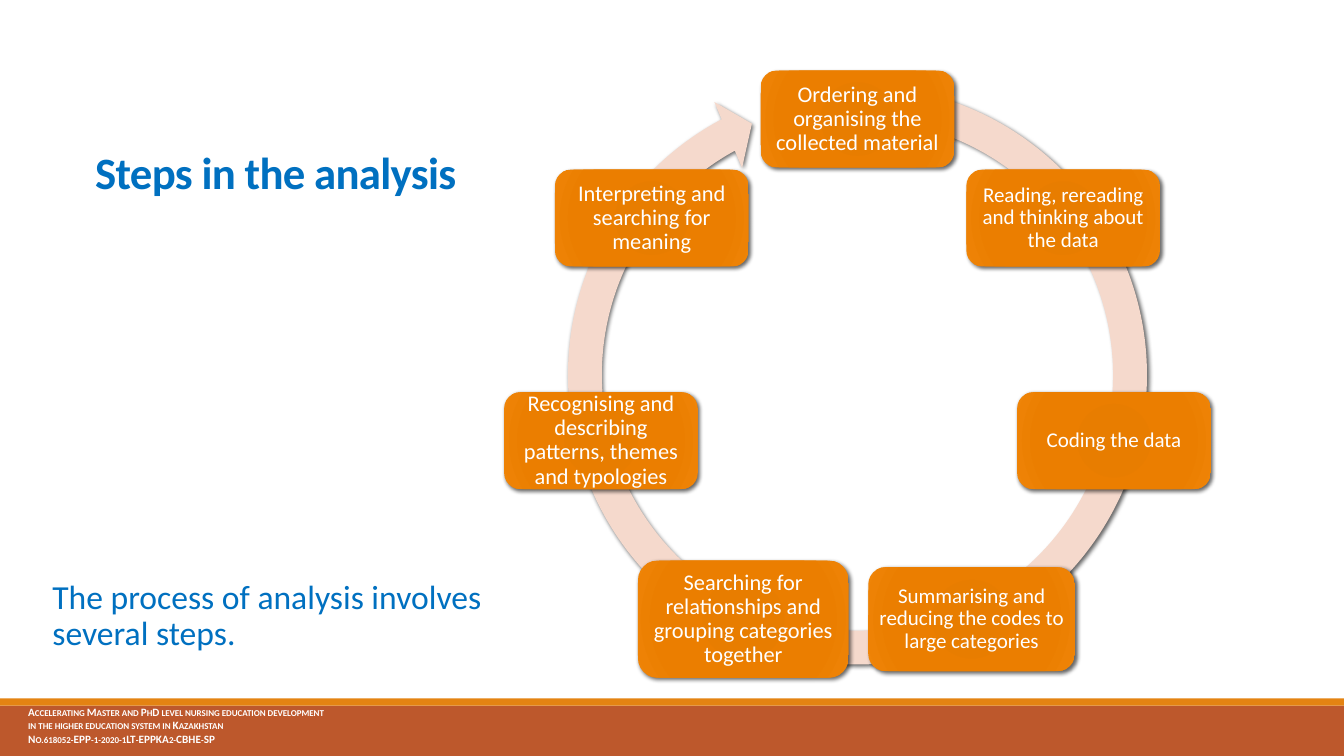
import math
from dataclasses import dataclass

from lxml import etree
from pptx import Presentation
from pptx import util as u
from pptx.dml import color
from pptx.enum import shapes, text
from pptx.oxml import ns

Cm = u.Cm


@dataclass(frozen=True)
class Theme:
    font: str = "Calibri"
    blue: str = "0070C0"
    white: str = "FFFFFF"
    rust: str = "BD582C"
    amber: str = "E48312"
    ring: str = "F5D9CC"
    glow: tuple = ((0, "E57B00"), (34, "E87D00"), (70, "EB7E00"), (100, "EF8407"))
    head: int = 32
    lead: int = 24
    step: int = 16
    dense: int = 15
    foot: int = 8


T = Theme()

# Text, type size, card width and height in cm, clockwise from the top
STEPS = [
    ("Ordering and organising the collected material", T.step, 4.88, 2.44),
    ("Reading, rereading and thinking about the data", T.dense, 4.88, 2.44),
    ("Coding the data", T.dense, 4.88, 2.44),
    ("Summarising and reducing the codes to large categories", T.dense, 5.21, 2.62),
    ("Searching for relationships and grouping categories together", T.step, 5.31, 2.95),
    ("Recognising and describing patterns, themes and typologies", T.step, 4.88, 2.44),
    ("Interpreting and searching for meaning", T.step, 4.88, 2.44),
]
FOOT = [
    "Accelerating Master and PhD level nursing education development",
    "in the higher education system in Kazakhstan",
    "No.618052-EPP-1-2020-1LT-EPPKA2-CBHE-SP",
]


def write(shape, lines, size, ink=T.white, bold=False, align=text.PP_ALIGN.LEFT,
          anchor=text.MSO_ANCHOR.TOP, pitch=1.0, pad=(0.25, 0.13), **marks):
    """Fill a shape with paragraphs; marks are extra run attributes."""
    frame = shape.text_frame
    frame.word_wrap = True
    frame.auto_size = text.MSO_AUTO_SIZE.NONE
    frame.vertical_anchor = anchor
    frame.margin_left = frame.margin_right = Cm(pad[0])
    frame.margin_top = frame.margin_bottom = Cm(pad[1])
    for i, line in enumerate(lines):
        para = frame.add_paragraph() if i else frame.paragraphs[0]
        para.alignment = align
        para.line_spacing = pitch
        para.space_before = u.Pt(0)
        run = para.add_run()
        run.text = line
        font = run.font
        font.name, font.size, font.bold = T.font, u.Pt(size), bold
        font.color.rgb = color.RGBColor.from_string(ink)
        for key, val in marks.items():
            run._r.get_or_add_rPr().set(key, val)


def place(shape, box):
    shape.left, shape.top, shape.width, shape.height = map(Cm, box)


def draw(slide, kind, box, fill):
    shape = slide.shapes.add_shape(kind, *map(Cm, box))
    shape.fill.solid()
    shape.fill.fore_color.rgb = color.RGBColor.from_string(fill)
    shape.line.fill.background()
    shape.shadow.inherit = False
    return shape


def shade(shape):
    """Add a soft shadow to the lower right."""
    effects = shape._element.spPr.find(ns.qn("a:effectLst"))
    drop = etree.SubElement(effects, ns.qn("a:outerShdw"), blurRad="38100",
                            dist="25400", dir="2700000", algn="tl", rotWithShape="0")
    tint = etree.SubElement(drop, ns.qn("a:srgbClr"), val="000000")
    etree.SubElement(tint, ns.qn("a:alpha"), val="60000")


def glow(shape):
    """Swap the solid fill for a radial gradient."""
    props = shape._element.spPr
    grad = etree.Element(ns.qn("a:gradFill"), rotWithShape="1")
    stops = etree.SubElement(grad, ns.qn("a:gsLst"))
    for pos, tone in T.glow:
        stop = etree.SubElement(stops, ns.qn("a:gs"), pos=str(pos * 1000))
        etree.SubElement(stop, ns.qn("a:srgbClr"), val=tone)
    route = etree.SubElement(grad, ns.qn("a:path"), path="circle")
    etree.SubElement(route, ns.qn("a:fillToRect"),
                     **{side: "100000" for side in "ltrb"})
    props.replace(props.find(ns.qn("a:solidFill")), grad)


def footer(slide, box):
    x, y, w, h = box
    strip = 0.18
    rect = shapes.MSO_SHAPE.RECTANGLE
    draw(slide, rect, (x, y + strip, w, h - strip), T.rust)
    draw(slide, rect, (x, y, w, strip), T.amber)
    note = slide.shapes.add_textbox(*map(Cm, (x + 0.46, y + 0.04, 11.66, 1.35)))
    write(note, FOOT, T.foot, bold=True, cap="small")


def intro(slide, box):
    x, y, w, h = box
    title = slide.shapes.title
    place(title, (x, y, w, 2.01))
    write(title, ["Steps in the analysis"], T.head, T.blue, bold=True,
          align=text.PP_ALIGN.CENTER, anchor=text.MSO_ANCHOR.BOTTOM,
          pitch=0.85, spc="-50")
    body = slide.placeholders[2]
    place(body, (x + 0.35, y + h - 2.44, 11.43, 2.44))
    write(body, ["The process of analysis involves several steps."],
          T.lead, T.blue, pitch=0.9, pad=(0, 0.13))


def cycle(slide, box):
    x, y, w, h = box
    # Ring with arrowhead
    ring = draw(slide, shapes.MSO_SHAPE.CIRCULAR_ARROW, box, T.ring)
    for i, val in enumerate((0.055, 3.307, 145.018, 169.582, 0.058)):
        ring.adjustments[i] = val
    shade(ring)
    # Cards at equal angles
    mid_x, mid_y, radius = x + w / 2, y + h / 2 + 0.18, 6.63
    for i, (label, size, wide, high) in enumerate(STEPS):
        turn = math.tau * i / len(STEPS)
        left = mid_x + radius * math.sin(turn) - wide / 2
        top = mid_y - radius * math.cos(turn) - high / 2
        card = draw(slide, shapes.MSO_SHAPE.ROUNDED_RECTANGLE,
                    (left, top, wide, high), T.amber)
        glow(card)
        shade(card)
        gap = 0.18 if size == T.step else 0.15
        write(card, [label], size, align=text.PP_ALIGN.CENTER,
              anchor=text.MSO_ANCHOR.MIDDLE, pitch=0.9, pad=(gap, gap))


def main():
    deck = Presentation()
    deck.slide_width, deck.slide_height = Cm(33.87), Cm(19.05)
    slide = deck.slides.add_slide(deck.slide_layouts[7])
    spare = slide.placeholders[1]._element
    spare.getparent().remove(spare)
    footer(slide, (0, 17.6, 33.87, 1.45))
    intro(slide, (0.97, 3.12, 11.96, 13.82))
    cycle(slide, (13.84, 1.68, 15.54, 15.54))
    deck.save("out.pptx")


if __name__ == "__main__":
    main()
